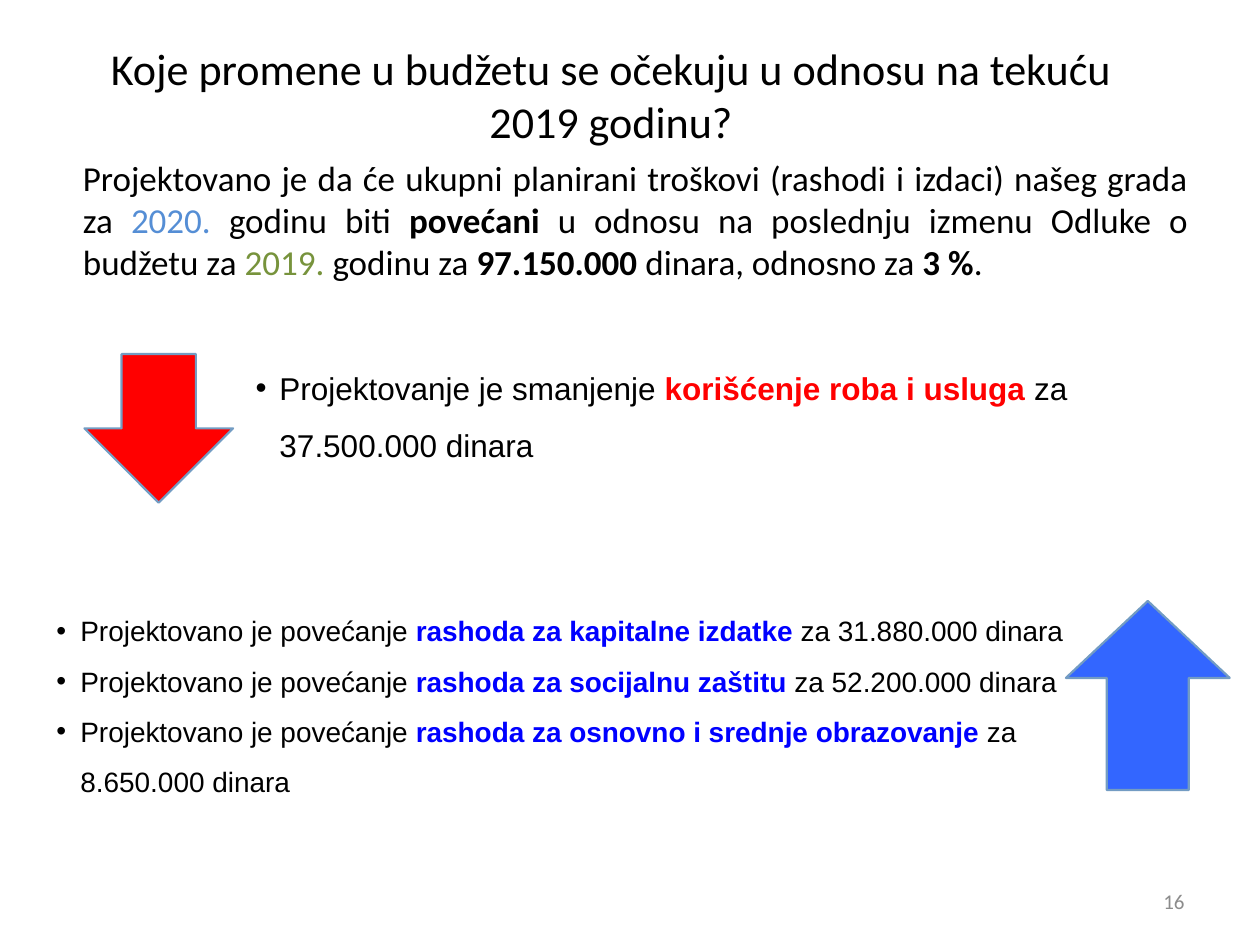
"""Build the slide on expected budget changes against 2019."""
from lxml.etree import SubElement
from pptx import Presentation
from pptx.dml.color import RGBColor
from pptx.enum.shapes import MSO_SHAPE as Shape
from pptx.enum.text import MSO_ANCHOR as Anchor, PP_ALIGN as Align
from pptx.oxml.ns import qn
from pptx.util import Inches, Pt

BLACK = RGBColor(0x00, 0x00, 0x00)
GRAY = RGBColor(0x8C, 0x8C, 0x8C)
SKY = RGBColor(0x55, 0x8E, 0xD5)
OLIVE = RGBColor(0x77, 0x93, 0x3C)
RED = RGBColor(0xFF, 0x00, 0x00)
BLUE = RGBColor(0x00, 0x00, 0xFF)
ARROW_BLUE = RGBColor(0x33, 0x66, 0xFF)
OUTLINE = RGBColor(0x73, 0x9C, 0xC3)

WIDTH, HEIGHT = 10, 7.5
BULLET_INDENT = 0.19

TITLE = [[("Koje promene u budžetu se očekuju u odnosu na tekuću\v2019 godinu?",)]]
SUMMARY = [[
    ("Projektovano je da će ukupni planirani troškovi (rashodi i izdaci) našeg grada za ",),
    ("2020. ", SKY),
    ("godinu biti ",),
    ("povećani ", BLACK, True),
    ("u odnosu na poslednju izmenu Odluke o budžetu za ",),
    ("2019. ", OLIVE),
    ("godinu za ",),
    ("97.150.000 ", BLACK, True),
    ("dinara, odnosno za ",),
    ("3 %", BLACK, True),
    (".",),
]]
DECREASE = [[
    ("Projektovanje je smanjenje ",),
    ("korišćenje roba i usluga ", RED, True),
    ("za 37.500.000 dinara",),
]]
INCREASES = [
    ("kapitalne izdatke", "31.880.000"),
    ("socijalnu zaštitu", "52.200.000"),
    ("osnovno i srednje obrazovanje", "8.650.000"),
]
INCREASE = [
    [("Projektovano je povećanje ",),
     (f"rashoda za {purpose} ", BLUE, True),
     (f"za {amount} dinara",)]
    for purpose, amount in INCREASES
]
ARROWS = [
    (Shape.DOWN_ARROW, (0.67, 2.81, 1.18, 1.18), 0.5, RED),
    (Shape.UP_ARROW, (8.46, 4.77, 1.3, 1.5), 0.47, ARROW_BLUE),
]


def add_text(page, place, paragraphs, size, font="Calibri", align=Align.LEFT,
             anchor=Anchor.TOP, before=0, spacing=1.0, indent=0, bullet=False):
    """Add a text box of paragraphs, each a list of (text, colour, bold) spans."""
    frame = page.shapes.add_textbox(*map(Inches, place)).text_frame
    frame.word_wrap = True
    frame.vertical_anchor = anchor
    for index, spans in enumerate(paragraphs):
        para = frame.add_paragraph() if index else frame.paragraphs[0]
        para.alignment = align
        para.line_spacing = spacing
        para.space_before = Pt(before)
        properties = para._p.get_or_add_pPr()
        properties.set("marL", str(Inches(indent)))
        if bullet:
            properties.set("indent", str(-Inches(indent)))
            SubElement(properties, qn("a:buFont"), typeface="Arial")
            SubElement(properties, qn("a:buChar"), char="•")
        for text, color, bold in ((*span, BLACK, False)[:3] if len(span) == 1
                                  else (*span, False)[:3] for span in spans):
            for part_index, part in enumerate(text.split("\v")):
                if part_index:
                    para.add_line_break()
                run = para.add_run()
                run.text = part
                run.font.name = font
                run.font.size = Pt(size)
                run.font.bold = bold
                run.font.color.rgb = color


def add_arrow(page, kind, place, head, color):
    """Add a filled block arrow with the given head proportion."""
    arrow = page.shapes.add_shape(kind, *map(Inches, place))
    arrow.adjustments[0] = 0.5
    arrow.adjustments[1] = head
    arrow.shadow.inherit = False
    arrow.fill.solid()
    arrow.fill.fore_color.rgb = color
    arrow.line.color.rgb = OUTLINE
    arrow.line.width = Pt(1.25)


def main():
    """Build and save the deck."""
    deck = Presentation()
    deck.slide_width, deck.slide_height = Inches(WIDTH), Inches(HEIGHT)
    page = deck.slides.add_slide(deck.slide_layouts[6])
    bullets = dict(font="Arial", spacing=1.5, indent=BULLET_INDENT, bullet=True)

    add_text(page, (0.35, 0.29, 9, 0.91), TITLE, 25.2,
             align=Align.CENTER, anchor=Anchor.MIDDLE)
    add_text(page, (0.53, 1.19, 9, 1.24), SUMMARY, 20,
             align=Align.JUSTIFY, before=4, indent=0.03)
    add_text(page, (1.93, 2.73, 7.87, 1.42), DECREASE, 18, before=3.6, **bullets)
    add_text(page, (0.35, 4.69, 8.33, 1.73), INCREASE, 16, **bullets)
    for arrow in ARROWS:
        add_arrow(page, *arrow)
    add_text(page, (7.17, 6.95, 2.33, 0.4), [[("16", GRAY)]], 12,
             align=Align.RIGHT, anchor=Anchor.MIDDLE)
    deck.save("out.pptx")


if __name__ == "__main__":
    main()
